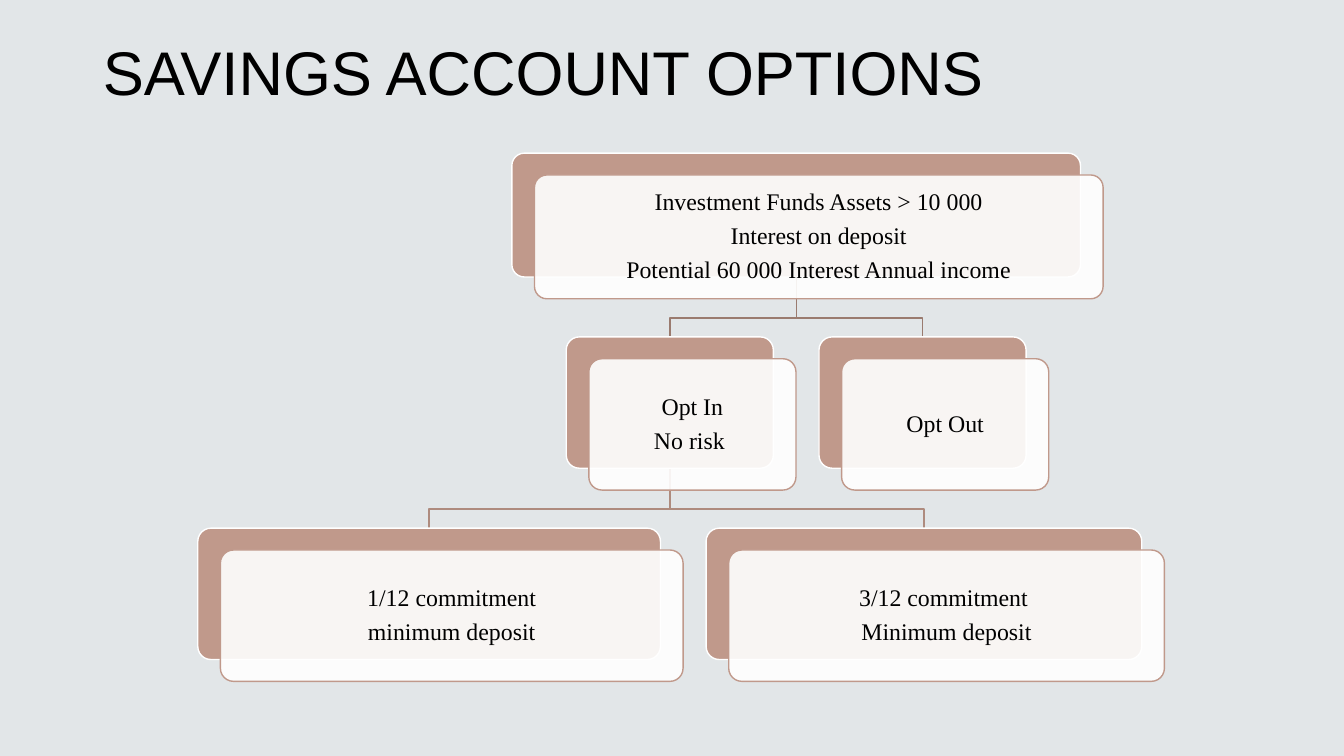
from dataclasses import dataclass, field

from lxml.etree import SubElement
from pptx import Presentation
from pptx.dml.color import RGBColor
from pptx.enum.shapes import MSO_SHAPE
from pptx.enum.text import MSO_ANCHOR, PP_ALIGN
from pptx.oxml.ns import qn
from pptx.util import Cm, Pt

# Lengths in centimetres
CARD_OFFSET_X, CARD_OFFSET_Y = 0.57, 0.55
SIBLING_GAP, LEVEL_GAP = 1.15, 1.51
BEND_DROP = 1.03
CLAY, WHITE, BLACK = "C0998B", "FFFFFF", "000000"
LEVEL_LINES = ["9A7B6F", "AE8B7E"]


@dataclass
class Option:
    lines: list
    width: float
    height: float
    children: list = field(default_factory=list)


SAVINGS = Option(
    ["Investment Funds Assets > 10 000", "Interest on deposit",
     "Potential 60 000 Interest Annual income"], 14.33, 3.12,
    [Option(["Opt In", "No risk "], 5.22, 3.31,
            [Option(["1/12 commitment", "minimum deposit"], 11.66, 3.31),
             Option(["3/12 commitment ", "Minimum deposit"], 10.98, 3.31)]),
     Option(["Opt Out"], 5.22, 3.31)])


def color(hex_string):
    return RGBColor.from_string(hex_string)


def write_text(shape, lines, font, size, align=PP_ALIGN.CENTER,
               anchor=MSO_ANCHOR.MIDDLE, space_after=0, inset=None):
    frame = shape.text_frame
    frame.word_wrap = True
    frame.vertical_anchor = anchor
    if inset is not None:
        frame.margin_left = frame.margin_right = Cm(inset)
        frame.margin_top = frame.margin_bottom = Cm(inset)
    for index, line in enumerate(lines):
        paragraph = frame.add_paragraph() if index else frame.paragraphs[0]
        paragraph.alignment = align
        paragraph.line_spacing = 0.9
        paragraph.space_before = Pt(0)
        paragraph.space_after = Pt(space_after)
        run = paragraph.add_run()
        run.text = line
        run.font.name = font
        run.font.size = Pt(size)
        run.font.color.rgb = color(BLACK)


def add_title(slide, left, top, width, height):
    title = slide.shapes.title
    title.left, title.top = Cm(left), Cm(top)
    title.width, title.height = Cm(width), Cm(height)
    write_text(title, ["SAVINGS ACCOUNT OPTIONS"], "Arial", 44,
               align=PP_ALIGN.LEFT, anchor=MSO_ANCHOR.BOTTOM)


def add_rounded(slide, left, top, width, height, fill, line):
    shape = slide.shapes.add_shape(MSO_SHAPE.ROUNDED_RECTANGLE, Cm(left),
                                   Cm(top), Cm(width), Cm(height))
    shape.adjustments[0] = 0.1
    shape.shadow.inherit = False
    shape.fill.solid()
    shape.fill.fore_color.rgb = color(fill)
    shape.line.color.rgb = color(line)
    shape.line.width = Pt(1)
    return shape


def add_card(slide, option, left, top):
    add_rounded(slide, left, top, option.width, option.height, CLAY, WHITE)
    # Front panel, 90 % opaque
    panel = add_rounded(slide, left + CARD_OFFSET_X, top + CARD_OFFSET_Y,
                        option.width, option.height, WHITE, CLAY)
    fill_color = panel.fill._xPr.find(qn("a:solidFill"))[0]
    SubElement(fill_color, qn("a:alpha"), val="90000")
    write_text(panel, option.lines, "Times New Roman", 17,
               space_after=6, inset=0.18)


def add_branch(slide, start_x, start_y, end_x, end_y, line):
    bend_y = Cm(start_y + BEND_DROP)
    builder = slide.shapes.build_freeform(Cm(start_x), Cm(start_y))
    builder.add_line_segments([(Cm(start_x), bend_y), (Cm(end_x), bend_y),
                               (Cm(end_x), Cm(end_y))], close=False)
    branch = builder.convert_to_shape()
    branch.shadow.inherit = False
    branch.fill.background()
    branch.line.color.rgb = color(line)
    branch.line.width = Pt(1)


def arrange(option, center, top, level=0):
    """Return the cards and branches of a tree, children centred below."""
    cards, branches = [(option, center - option.width / 2, top)], []
    bottom = top + option.height
    row_width = sum(child.width + SIBLING_GAP for child in option.children)
    left = center - (row_width - SIBLING_GAP) / 2
    for child in option.children:
        child_center, child_top = left + child.width / 2, bottom + LEVEL_GAP
        branches.append((center, bottom, child_center, child_top,
                         LEVEL_LINES[level]))
        lower = arrange(child, child_center, child_top, level + 1)
        cards += lower[0]
        branches += lower[1]
        left += child.width + SIBLING_GAP
    return cards, branches


def add_tree(slide, root, left, top):
    cards, branches = arrange(root, left + root.width / 2, top)
    # Branches lie behind the cards
    for branch in branches:
        add_branch(slide, *branch)
    for card in cards:
        add_card(slide, *card)


def main():
    presentation = Presentation()
    presentation.slide_width, presentation.slide_height = Cm(33.87), Cm(19.05)
    slide = presentation.slides.add_slide(presentation.slide_layouts[5])
    slide.background.fill.solid()
    slide.background.fill.fore_color.rgb = color("E2E6E8")
    add_title(slide, 2.34, 0.69, 29.21, 2.18)
    add_tree(slide, SAVINGS, 12.9, 3.86)
    presentation.save("out.pptx")


if __name__ == "__main__":
    main()
